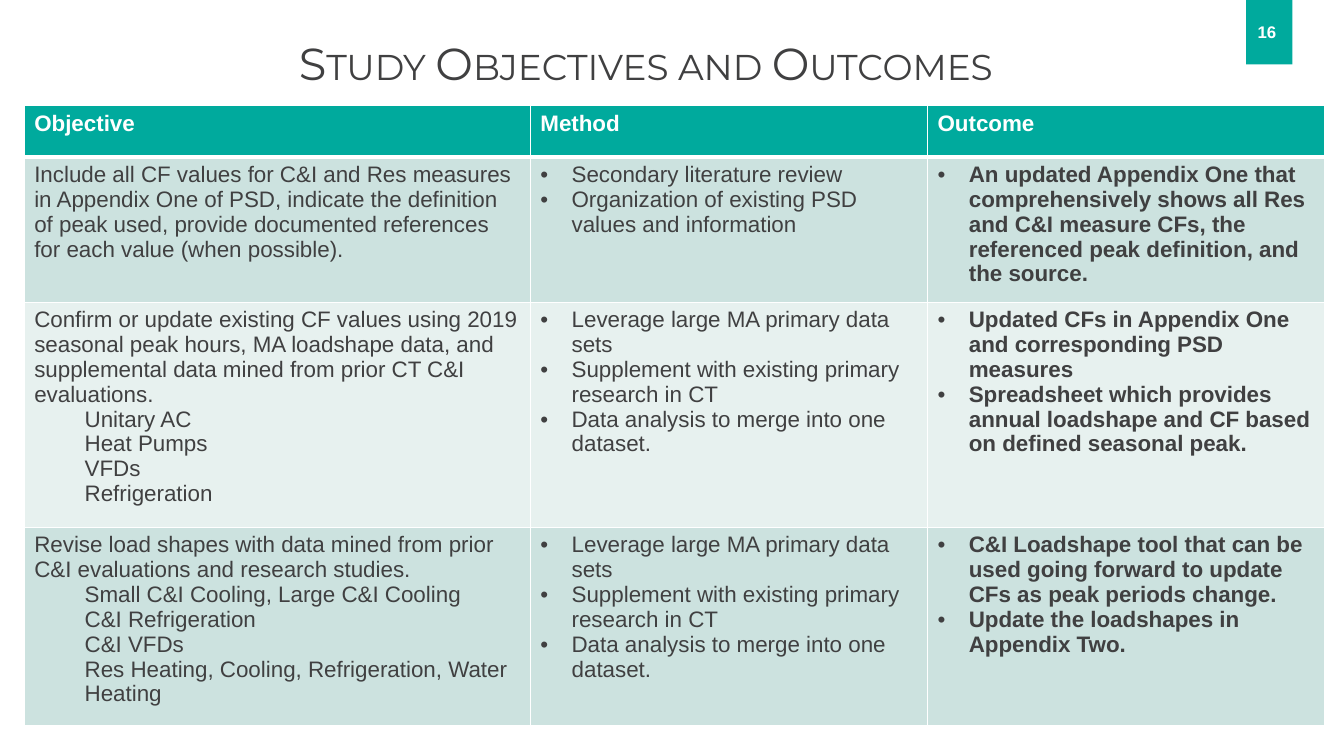
from dataclasses import dataclass
from typing import Optional

from lxml.etree import SubElement
from pptx import Presentation
from pptx.dml.color import RGBColor
from pptx.enum.shapes import MSO_SHAPE as Shape
from pptx.enum.text import MSO_ANCHOR as Anchor, PP_ALIGN as Align
from pptx.oxml.ns import qn
from pptx.util import Inches, Pt

COLORS = {
    "white": "FFFFFF",
    "teal": "00AA9D",
    "text": "404041",
    "band_dark": "CCE2DF",
    "band_light": "E7F1EF",
}
COLUMN_WIDTHS = (5.02, 3.94, 3.94)
HEADER_HEIGHT = 0.51
HEADINGS = ("Objective", "Method", "Outcome")
BULLET_INDENT = 0.31
TOPIC_INDENT = 0.5


@dataclass(frozen=True)
class StudyRow:
    height: float
    objective: str
    topics: tuple[str, ...]
    methods: tuple[str, ...]
    outcomes: tuple[str, ...]


DATA_METHODS = (
    "Leverage large MA primary data sets",
    "Supplement with existing primary research in CT",
    "Data analysis to merge into one dataset.",
)
STUDY_ROWS = (
    StudyRow(
        1.44,
        "Include all CF values for C&I and Res measures in Appendix One of PSD, "
        "indicate the definition of peak used, provide documented references "
        "for each value (when possible).",
        (),
        ("Secondary literature review",
         "Organization of existing PSD values and information"),
        ("An updated Appendix One that comprehensively shows all Res and C&I "
         "measure CFs, the referenced peak definition, and the source.",),
    ),
    StudyRow(
        1.87,
        "Confirm or update existing CF values using 2019 seasonal peak hours, "
        "MA loadshape data, and supplemental data mined from prior CT C&I "
        "evaluations.",
        ("Unitary AC", "Heat Pumps", "VFDs", "Refrigeration"),
        DATA_METHODS,
        ("Updated CFs in Appendix One and corresponding PSD measures",
         "Spreadsheet which provides annual loadshape and CF based on defined "
         "seasonal peak."),
    ),
    StudyRow(
        1.62,
        "Revise load shapes with data mined from prior C&I evaluations and "
        "research studies.",
        ("Small C&I Cooling, Large C&I Cooling", "C&I Refrigeration", "C&I VFDs",
         "Res Heating, Cooling, Refrigeration, Water Heating"),
        DATA_METHODS,
        ("C&I Loadshape tool that can be used going forward to update CFs as "
         "peak periods change.",
         "Update the loadshapes in Appendix Two."),
    ),
)


def rgb(name: str) -> RGBColor:
    return RGBColor.from_string(COLORS[name])


def add_text(frame, text: str, *, size: float = 16, font: str = "Arial",
             color: str = "text", bold: bool = False, small_caps: bool = False,
             align: Optional[Align] = None, line_spacing: Optional[float] = None,
             indent: float = 0, bullet: bool = False) -> None:
    """Fill the frame's first paragraph if it is empty, otherwise append one."""
    first = frame.paragraphs[0]
    paragraph = frame.add_paragraph() if first.runs else first
    if align is not None:
        paragraph.alignment = align
    if line_spacing is not None:
        paragraph.line_spacing = line_spacing
    if indent:
        properties = paragraph._p.get_or_add_pPr()
        properties.set("marL", str(Inches(indent)))
        properties.set("indent", str(-Inches(indent) if bullet else 0))
        if bullet:
            SubElement(properties, qn("a:buFont")).set("typeface", "Arial")
            SubElement(properties, qn("a:buChar")).set("char", "•")
        else:
            paragraph.level = 1
    run = paragraph.add_run()
    run.text = text
    run.font.size = Pt(size)
    run.font.name = font
    run.font.bold = bold
    run.font.color.rgb = rgb(color)
    if small_caps:
        run._r.get_or_add_rPr().set("cap", "small")


def style_cell(cell, fill: str, top: float = 1, bottom: float = 1) -> None:
    """Set white borders (widths in points) and a solid fill."""
    properties = cell._tc.get_or_add_tcPr()
    for side, width in (("L", 1), ("R", 1), ("T", top), ("B", bottom)):
        line = SubElement(properties, qn(f"a:ln{side}"), w=str(Pt(width)))
        solid = SubElement(line, qn("a:solidFill"))
        SubElement(solid, qn("a:srgbClr"), val=COLORS["white"])
    cell.fill.solid()
    cell.fill.fore_color.rgb = rgb(fill)


def add_title(slide) -> None:
    box = slide.shapes.add_textbox(
        Inches(0.39), Inches(0.33), Inches(12.03), Inches(0.61))
    frame = box.text_frame
    frame.word_wrap = True
    frame.vertical_anchor = Anchor.BOTTOM
    add_text(frame, "Study Objectives and Outcomes", size=32, font="Montserrat",
             small_caps=True, align=Align.CENTER, line_spacing=0.9)


def add_page_tab(slide) -> None:
    tab = slide.shapes.add_shape(
        Shape.RECTANGLE, Inches(12.36), Inches(-0.01), Inches(0.46), Inches(0.65))
    tab.shadow.inherit = False
    tab.fill.solid()
    tab.fill.fore_color.rgb = rgb("teal")
    tab.line.fill.background()
    tab.text_frame.vertical_anchor = Anchor.MIDDLE
    add_text(tab.text_frame, "16 ", size=12, color="white", bold=True,
             align=Align.CENTER)


def add_study_table(slide) -> None:
    heights = (HEADER_HEIGHT, *(row.height for row in STUDY_ROWS))
    table = slide.shapes.add_table(
        len(heights), len(COLUMN_WIDTHS), Inches(0.24), Inches(1.05),
        Inches(sum(COLUMN_WIDTHS)), Inches(sum(heights))).table
    for column, width in zip(table.columns, COLUMN_WIDTHS):
        column.width = Inches(width)
    for table_row, height in zip(table.rows, heights):
        table_row.height = Inches(height)

    for cell, heading in zip(table.rows[0].cells, HEADINGS):
        style_cell(cell, "teal", bottom=3)
        add_text(cell.text_frame, heading, color="white", bold=True)

    for index, study in enumerate(STUDY_ROWS):
        cells = list(table.rows[index + 1].cells)
        for cell in cells:
            style_cell(cell, "band_light" if index % 2 else "band_dark",
                       top=1 if index else 3)
        objective, method, outcome = (cell.text_frame for cell in cells)
        add_text(objective, study.objective)
        for topic in study.topics:
            add_text(objective, topic, indent=TOPIC_INDENT)
        for item in study.methods:
            add_text(method, item, indent=BULLET_INDENT, bullet=True)
        for item in study.outcomes:
            add_text(outcome, item, indent=BULLET_INDENT, bullet=True, bold=True)


def main() -> None:
    presentation = Presentation()
    presentation.slide_width = Inches(13.33)
    presentation.slide_height = Inches(7.5)
    slide = presentation.slides.add_slide(presentation.slide_layouts[6])
    add_title(slide)
    add_study_table(slide)
    add_page_tab(slide)
    presentation.save("out.pptx")


if __name__ == "__main__":
    main()
